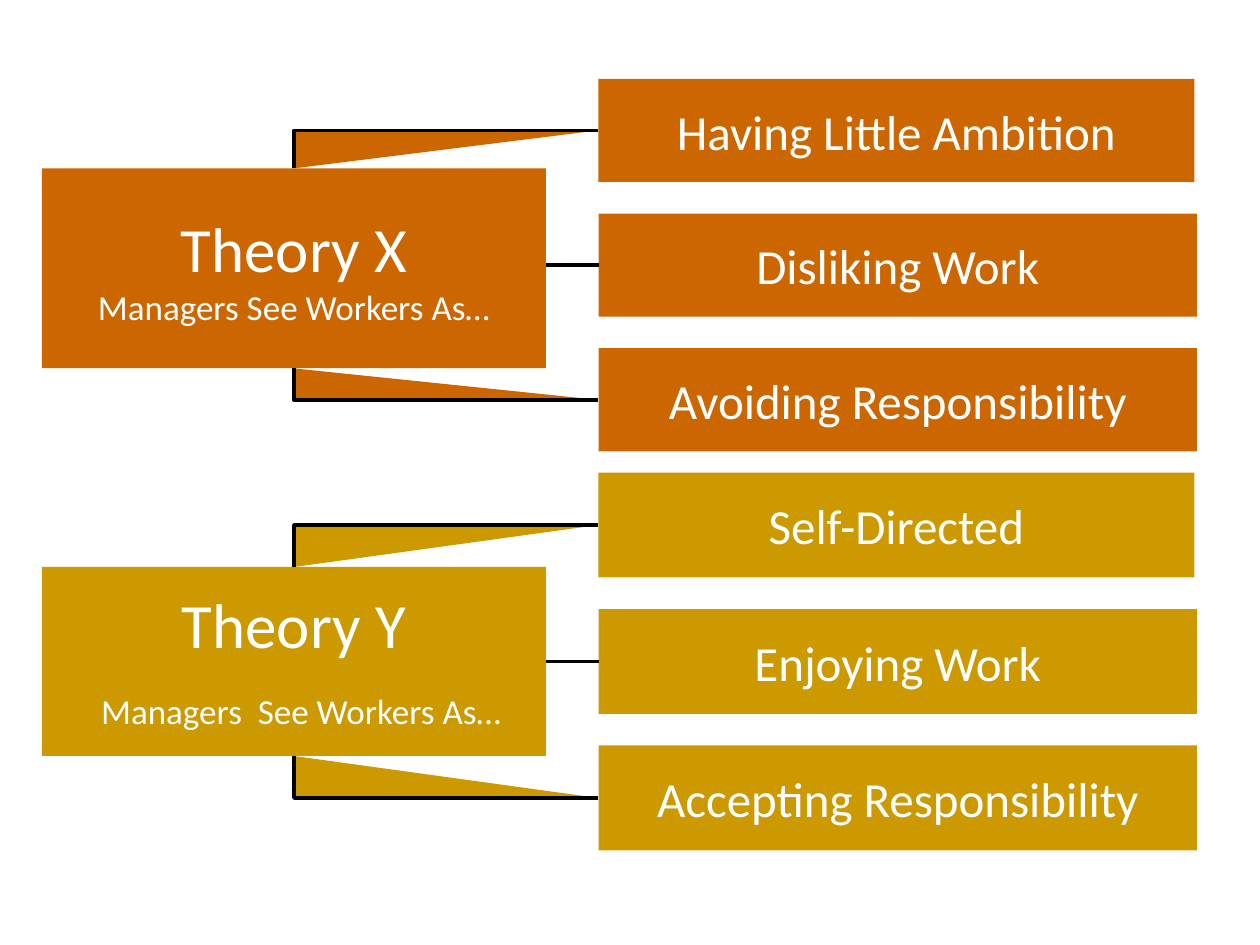
from dataclasses import dataclass

from lxml import etree
from pptx import Presentation
from pptx import util as u
from pptx.dml.color import RGBColor
from pptx.enum import shapes, text
from pptx.oxml.ns import qn


@dataclass(frozen=True)
class Theme:
    font: str = "Calibri"
    white: str = "FFFFFF"
    black: str = "000000"
    orange: str = "CC6600"
    gold: str = "CC9900"
    title: int = 36
    trait: int = 28
    caption: int = 20
    stroke: int = 2


class Diagram:
    def __init__(self, page, theme):
        self.page = page
        self.theme = theme
        self.shapes = page.shapes

    def start_group(self):
        self.shapes = self.page.shapes.add_group_shape().shapes

    def ink(self, line):
        line.color.rgb = RGBColor.from_string(self.theme.black)
        line.width = u.Pt(self.theme.stroke)

    def fill(self, shape, color):
        shape.shadow.inherit = False
        shape.fill.solid()
        shape.fill.fore_color.rgb = RGBColor.from_string(color)

    def box(self, left, top, width, height, color, rows):
        box = self.shapes.add_shape(
            shapes.MSO_SHAPE.RECTANGLE, *map(u.Pt, (left, top, width, height)))
        self.fill(box, color)
        box.line.fill.background()
        frame = box.text_frame
        frame.word_wrap = False
        frame.vertical_anchor = text.MSO_ANCHOR.MIDDLE
        for index, spans in enumerate(rows):
            para = frame.add_paragraph() if index else frame.paragraphs[0]
            para.alignment = text.PP_ALIGN.CENTER
            para.font.name = self.theme.font
            para.font.color.rgb = RGBColor.from_string(self.theme.white)
            if len(spans) == 1:
                para.font.size = u.Pt(spans[0][1])
            for words, size in spans:
                span = para.add_run()
                span.text = words
                if len(spans) > 1:
                    span.font.size = u.Pt(size)

    def line(self, x1, y1, x2, y2):
        line = self.shapes.add_connector(
            shapes.MSO_CONNECTOR.STRAIGHT, *map(u.Pt, (x1, y1, x2, y2)))
        self.ink(line.line)
        etree.SubElement(line._element.spPr, qn("a:effectLst"))

    def elbow(self, x1, y1, x2, y2, color):
        builder = self.shapes.build_freeform(u.Pt(x1), u.Pt(y1))
        builder.add_line_segments(
            [(u.Pt(x1), u.Pt(y2)), (u.Pt(x2), u.Pt(y2))], close=False)
        elbow = builder.convert_to_shape()
        self.fill(elbow, color)
        self.ink(elbow.line)

    def theory(self, color, head_top, head_height, heading, first_top, pitch, height, traits):
        left, width, trait_left = 24, 288, 342
        self.start_group()
        self.box(left, head_top, width, head_height, color, heading)
        for index, trait in enumerate(traits):
            trait_width = 342 if index else 340.5
            self.box(trait_left, first_top + index * pitch, trait_width, height,
                     color, [[(trait, self.theme.trait)]])
        middle = left + width / 2
        upper = first_top + height / 2
        self.elbow(middle, head_top, trait_left, upper, color)
        self.line(left + width, upper + pitch, trait_left, upper + pitch)
        self.elbow(middle, head_top + head_height, trait_left, upper + 2 * pitch, color)


def main():
    deck = Presentation()
    deck.slide_width, deck.slide_height = u.Pt(720), u.Pt(540)
    theme = Theme()
    diagram = Diagram(deck.slides.add_slide(deck.slide_layouts[6]), theme)
    diagram.theory(
        theme.orange, 96.25, 114.25,
        [[("Theory X", theme.title)],
         [("Managers See Workers As…", theme.caption)]],
        45, 77, 59,
        ["Having Little Ambition", "Disliking Work", "Avoiding Responsibility"])
    diagram.theory(
        theme.gold, 324, 108,
        [[("Theory Y", theme.title)],
         [(" ", theme.title), ("Managers  See Workers As…", theme.caption)]],
        270, 78, 60,
        ["Self-Directed", "Enjoying Work", "Accepting Responsibility"])
    deck.save("out.pptx")


if __name__ == "__main__":
    main()
